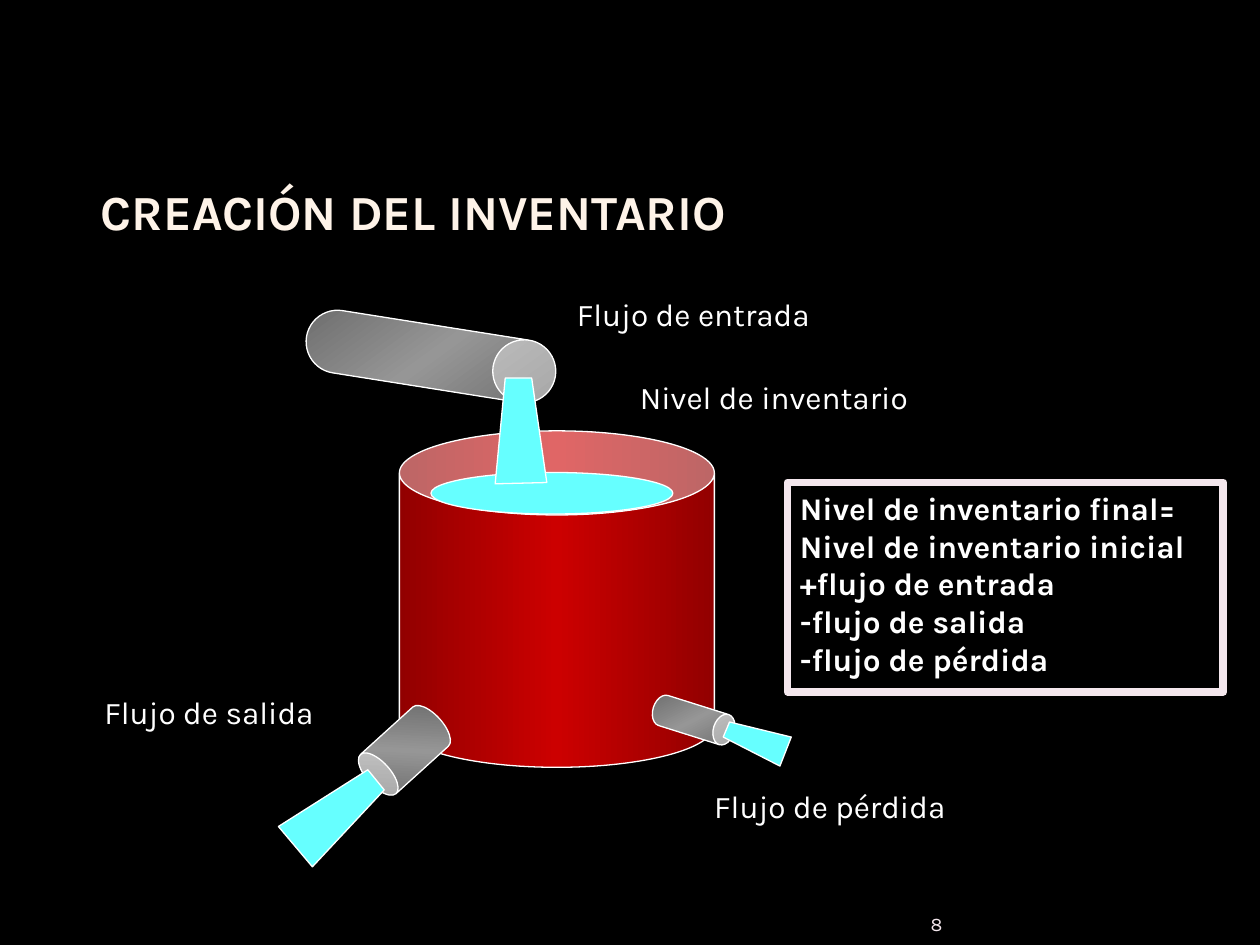
from copy import deepcopy

from lxml import etree
from pptx import Presentation
from pptx.dml.color import RGBColor
from pptx.enum import shapes, text
from pptx.oxml.ns import qn
from pptx.util import Inches, Pt

FONT = "Karla"
COLORS = {
    "background": "000000",
    "title": "FEF3E8",
    "accent": "F4E7ED",
    "text": "FFFFFF",
    "water": "66FFFF",
    "tank": "CC0000",
    "pipe": "969696",
}
EDGE_SHADE = "47000"  # darkening of the gradient ends, in 1/1000 percent


def rgb(name):
    return RGBColor.from_string(COLORS[name])


def box(left, top, width, height):
    return [Inches(v) for v in (left, top, width, height)]


def format_text(tf, size, color="text", bold=False):
    for p in tf.paragraphs:
        for r in p.runs:
            r.font.name = FONT
            r.font.size = Pt(size)
            r.font.bold = bold
            r.font.color.rgb = rgb(color)


def outline(sp, color="text", width=0.75):
    sp.shadow.inherit = False
    sp.line.color.rgb = rgb(color)
    sp.line.width = Pt(width)


def fill_water(sp):
    sp.fill.solid()
    sp.fill.fore_color.rgb = rgb("water")
    outline(sp)


def add_title(s, words):
    title = s.shapes.title
    title.left, title.top, title.width, title.height = box(0.75, 0.83, 8.5, 1.08)
    tf = title.text_frame
    tf.text = words
    tf.word_wrap = True
    tf.auto_size = text.MSO_AUTO_SIZE.NONE
    tf.vertical_anchor = text.MSO_ANCHOR.BOTTOM
    tf.margin_left = tf.margin_right = Inches(0.05)
    tf.margin_top = tf.margin_bottom = 0
    tf.paragraphs[0].alignment = text.PP_ALIGN.LEFT
    format_text(tf, 28, "title", bold=True)


def add_can(s, place, color, adjust, angle, rotation=0):
    """Add a cylinder shaded dark, light, dark; angle runs clockwise."""
    sp = s.shapes.add_shape(shapes.MSO_SHAPE.CAN, *box(*place))
    sp.adjustments[0] = adjust
    sp.rotation = rotation
    sp.fill.gradient()
    sp.fill.gradient_angle = -angle % 360
    stops = sp._element.spPr.find(".//" + qn("a:gsLst"))
    stops.append(deepcopy(stops[0]))
    for stop, position in zip(sp.fill.gradient_stops, (0, 0.5, 1)):
        stop.position = position
        stop.color.rgb = rgb(color)
    for edge in (stops[0], stops[2]):
        etree.SubElement(edge[0], qn("a:shade"), val=EDGE_SHADE)
    outline(sp)


def add_jet(s, points):
    start, *rest = [(Inches(x), Inches(y)) for x, y in points]
    builder = s.shapes.build_freeform(*start)
    builder.add_line_segments(rest, close=True)
    fill_water(builder.convert_to_shape())


def add_label(s, words, place):
    tf = s.shapes.add_textbox(*box(*place)).text_frame
    tf.text = words
    tf.word_wrap = True
    format_text(tf, 18)


def add_formula(s, lines):
    sp = s.shapes.add_shape(shapes.MSO_SHAPE.RECTANGLE, *box(6.25, 3.83, 3.46, 1.66))
    sp.fill.background()
    outline(sp, "accent", 4.5)
    tf = sp.text_frame
    tf.text = "\n".join(lines)
    tf.word_wrap = True
    tf.vertical_anchor = text.MSO_ANCHOR.TOP
    for p in tf.paragraphs:
        p.alignment = text.PP_ALIGN.LEFT
    format_text(tf, 18, bold=True)


def add_page_number(s, number):
    tf = s.shapes.add_textbox(*box(6.84, 7.17, 0.64, 0.25)).text_frame
    tf.text = number
    tf.word_wrap = True
    tf.vertical_anchor = text.MSO_ANCHOR.BOTTOM
    tf.margin_left = tf.margin_right = tf.margin_top = tf.margin_bottom = 0
    tf.paragraphs[0].alignment = text.PP_ALIGN.RIGHT
    format_text(tf, 11, "accent")


def main():
    prs = Presentation()
    prs.slide_width, prs.slide_height = Inches(10), Inches(7.5)
    s = prs.slides.add_slide(prs.slide_layouts[5])
    s.background.fill.solid()
    s.background.fill.fore_color.rgb = rgb("background")

    add_title(s, "CREACIÓN DEL INVENTARIO")
    add_page_number(s, "8")

    # Tank, outflow pipe and loss pipe, then the water level and inflow pipe
    add_can(s, (3.17, 3.42, 2.5, 2.67), "tank", 0.267, 0)
    add_can(s, (3, 5.58, 0.42, 0.75), "pipe", 0.45, 45, 227.8)
    add_can(s, (5.38, 5.38, 0.25, 0.67), "pipe", 0.667, 315, 107.5)
    level = s.shapes.add_shape(shapes.MSO_SHAPE.OVAL, *box(3.42, 3.75, 1.92, 0.33))
    fill_water(level)
    add_can(s, (3.17, 1.83, 0.5, 2), "pipe", 1, 315, 99)

    for points in (
        [(4.34, 3.83), (4.22, 3), (4.01, 3), (3.93, 3.84)],
        [(6.28, 5.85), (5.79, 5.73), (5.74, 5.85), (6.19, 6.08)],
        [(2.48, 6.88), (3.05, 6.27), (2.92, 6.11), (2.21, 6.56)],
    ):
        add_jet(s, points)

    for words, place in (
        ("Flujo de entrada", (4.48, 2.29, 2.61, 0.5)),
        ("Nivel de inventario", (4.98, 2.95, 2.94, 0.5)),
        ("Flujo de salida", (0.73, 5.45, 2.32, 0.5)),
        ("Flujo de pérdida", (5.57, 6.2, 2.58, 0.5)),
    ):
        add_label(s, words, place)

    add_formula(s, [
        "Nivel de inventario final=",
        "Nivel de inventario inicial",
        "+flujo de entrada",
        "-flujo de salida",
        "-flujo de pérdida",
    ])
    prs.save("out.pptx")


if __name__ == "__main__":
    main()
